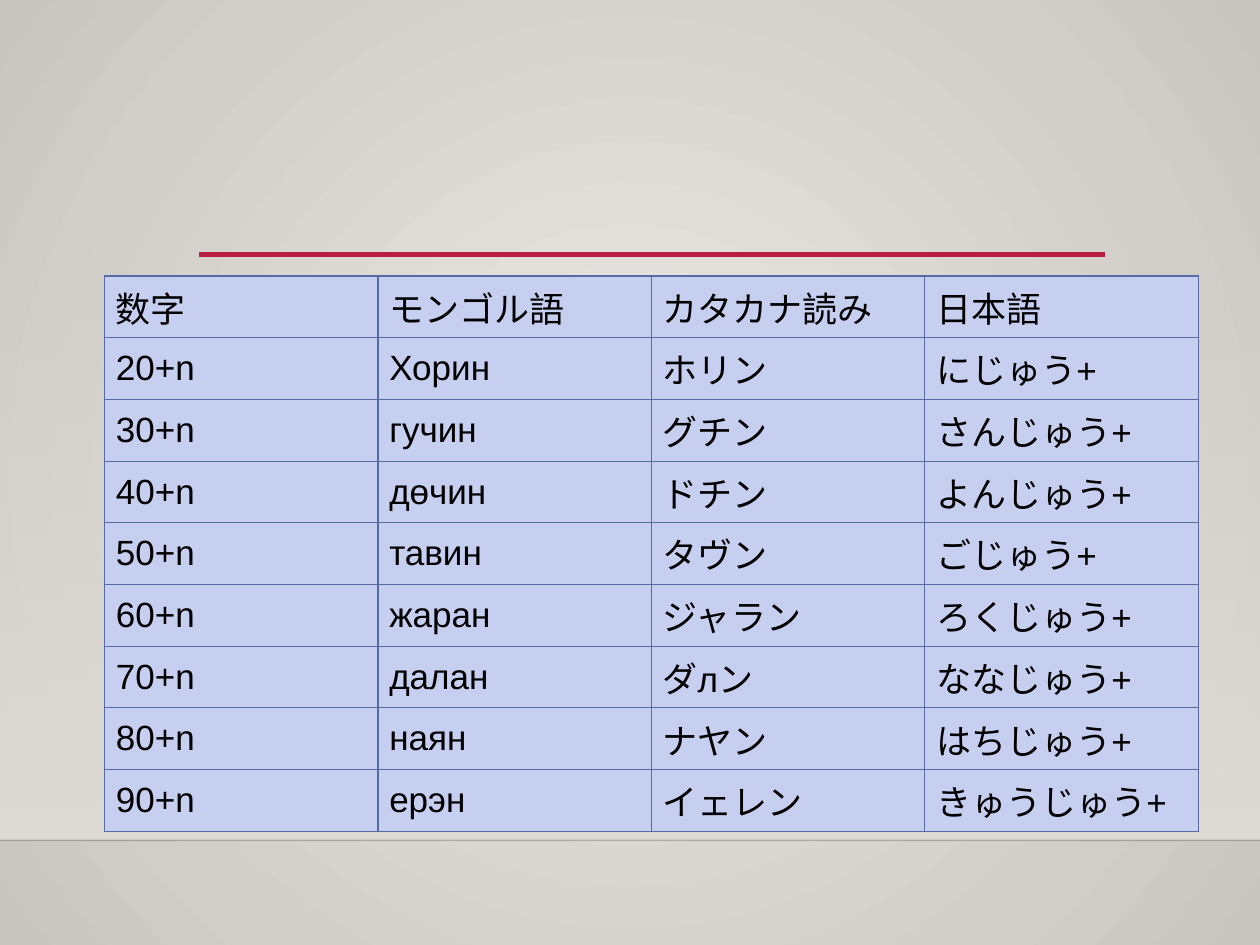
from lxml.etree import SubElement
from pptx import Presentation
from pptx.dml.color import RGBColor
from pptx.enum.shapes import MSO_CONNECTOR as CONNECTOR, MSO_SHAPE as SHAPE
from pptx.enum.text import MSO_ANCHOR as ANCHOR
from pptx.oxml import parse_xml
from pptx.oxml.ns import nsdecls, qn
from pptx.util import Inches, Pt

COLORS = {
    "glow": "EBE9E6", "edge": "C9C5C0", "wall": "DFDBD5", "floor": "000001",
    "accent": "B71E42", "cell": "C7CFF1", "border": "546BA4", "text": "000000",
}
ROWS = [
    ("数字", "モンゴル語", "カタカナ読み", "日本語"),
    ("20+n", "Хорин", "ホリン", "にじゅう+"),
    ("30+n", "гучин", "グチン", "さんじゅう+"),
    ("40+n", "дөчин", "ドチン", "よんじゅう+"),
    ("50+n", "тавин", "タヴン", "ごじゅう+"),
    ("60+n", "жаран", "ジャラン", "ろくじゅう+"),
    ("70+n", "далан", "ダлン", "ななじゅう+"),
    ("80+n", "наян", "ナヤン", "はちじゅう+"),
    ("90+n", "ерэн", "イェレン", "きゅうじゅう+"),
]
COL_WIDTH, ROW_HEIGHT = Inches(2.17), Inches(0.49)


def set_gradient(fill, owner, colors, direction):
    """Fill with a two-stop gradient and return its XML; direction replaces the default a:lin."""
    fill.gradient()
    for stop, color in zip(fill.gradient_stops, colors):
        stop.color.rgb = RGBColor.from_string(COLORS[color])
    gradient = next(owner.iter(qn("a:gradFill")))
    gradient.replace(gradient.find(qn("a:lin")), parse_xml(direction))
    return gradient


def add_rule(left, right, y, color, width):
    rule = slide.shapes.add_connector(
        CONNECTOR.STRAIGHT, Inches(left), Inches(y), Inches(right), Inches(y))
    rule.line.color.rgb = RGBColor.from_string(COLORS[color])
    rule.line.width = Pt(width)
    SubElement(rule.element.spPr, qn("a:effectLst"))
    return rule


prs = Presentation()
prs.slide_width, prs.slide_height = Inches(10), Inches(7.5)
slide = prs.slides.add_slide(prs.slide_layouts[6])

# Backdrop: radial glow, a wall that fades in downwards, and the floor line
set_gradient(
    slide.background.fill, slide.element, ("glow", "edge"),
    f'<a:path {nsdecls("a")} path="circle">'
    '<a:fillToRect l="50000" t="50000" r="50000" b="50000"/></a:path>')

wall = slide.shapes.add_shape(SHAPE.RECTANGLE, 0, Inches(2.2), Inches(10), Inches(4.46))
wall.shadow.inherit = False
wall.line.fill.background()
wall_gradient = set_gradient(
    wall.fill, wall.element, ("wall", "wall"),
    f'<a:lin {nsdecls("a")} ang="5400000" scaled="0"/>')
SubElement(next(wall_gradient.iter(qn("a:srgbClr"))), qn("a:alpha"), val="0")

floor = add_rule(0, 10, 6.67, "floor", 1)
SubElement(next(floor.element.iter(qn("a:srgbClr"))), qn("a:alpha"), val="20000")
add_rule(1.58, 8.77, 2.02, "accent", 2.5)

# Table of tens
numbers = slide.shapes.add_table(
    len(ROWS), len(ROWS[0]), Inches(0.83), Inches(2.19),
    COL_WIDTH * len(ROWS[0]), ROW_HEIGHT * len(ROWS)).table
numbers.first_row = numbers.horz_banding = False
for column in numbers.columns:
    column.width = COL_WIDTH
for row, words in zip(numbers.rows, ROWS):
    row.height = ROW_HEIGHT
    for cell, word in zip(row.cells, words):
        cell.vertical_anchor = ANCHOR.MIDDLE
        cell.margin_left = cell.margin_right = Inches(0.09)
        cell.margin_top = cell.margin_bottom = Inches(0.04)
        run = cell.text_frame.paragraphs[0].add_run()
        run.text = word
        run.font.name, run.font.size = "Arial", Pt(20)
        run.font.color.rgb = RGBColor.from_string(COLORS["text"])
        properties = cell._tc.get_or_add_tcPr()
        for side in ("lnL", "lnR", "lnT", "lnB"):
            border = SubElement(properties, qn(f"a:{side}"), w=str(Pt(0.75)))
            SubElement(SubElement(border, qn("a:solidFill")), qn("a:srgbClr"),
                       val=COLORS["border"])
        cell.fill.solid()
        cell.fill.fore_color.rgb = RGBColor.from_string(COLORS["cell"])

prs.save("out.pptx")
